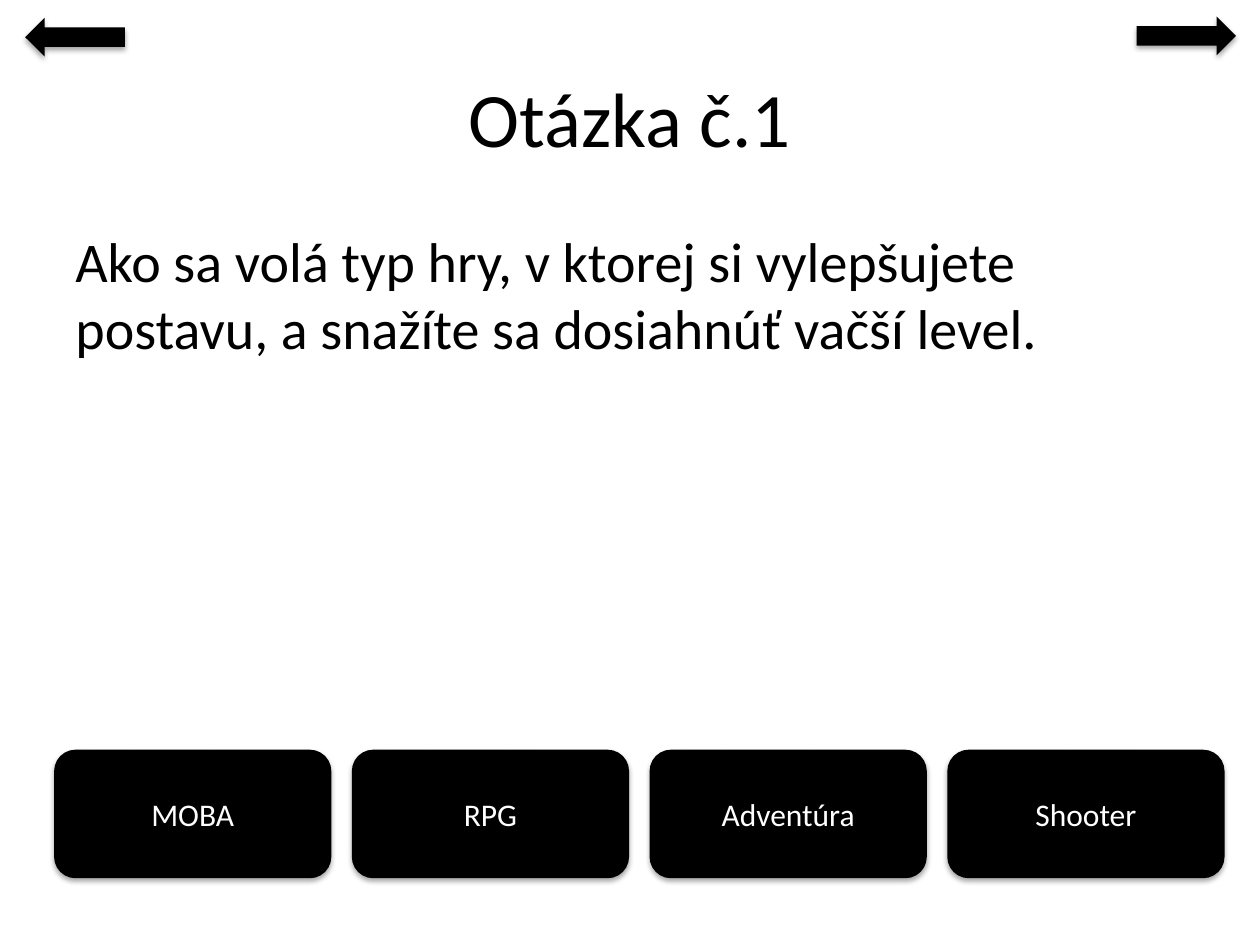
from dataclasses import dataclass

from lxml import etree
from pptx import Presentation
from pptx.dml.color import RGBColor
from pptx.enum.shapes import MSO_SHAPE
from pptx.enum.text import MSO_ANCHOR, PP_ALIGN
from pptx.oxml.ns import qn
from pptx.util import Inches, Pt

BLACK = RGBColor(0x00, 0x00, 0x00)
WHITE = RGBColor(0xFF, 0xFF, 0xFF)
FONT = "Calibri"
ARROW, BUTTON = MSO_SHAPE.RIGHT_ARROW, MSO_SHAPE.ROUNDED_RECTANGLE
CENTER, LEFT = PP_ALIGN.CENTER, PP_ALIGN.LEFT
MIDDLE, TOP = MSO_ANCHOR.MIDDLE, MSO_ANCHOR.TOP

SLIDE_W, SLIDE_H = 10, 7.5
MARGIN = 0.05 * SLIDE_W
CONTENT_W = SLIDE_W - 2 * MARGIN
ANSWERS_LEFT, ANSWERS_TOP = 0.43, 5.95
ANSWER_W, ANSWER_H, ANSWER_PITCH = 2.2, 1.02, 2.363
ARROW_W, ARROW_H = 0.79, 0.31


@dataclass(frozen=True)
class Box:
    left: float
    top: float
    width: float
    height: float

    def emu(self) -> tuple:
        return tuple(Inches(v) for v in (self.left, self.top, self.width, self.height))


@dataclass(frozen=True)
class NavArrow:
    left: float
    top: float
    rotation: float


ARROWS = (NavArrow(9.02, 0.13, 0), NavArrow(0.2, 0.14, 180))
ANSWERS = ("MOBA", "RPG", "Adventúra", "Shooter")


def write(sp, text: str, size: float, color: RGBColor, align, anchor) -> None:
    tf = sp.text_frame
    tf.word_wrap = True
    tf.vertical_anchor = anchor
    tf.text = text
    p = tf.paragraphs[0]
    p.alignment = align
    font = p.runs[0].font
    font.name, font.size = FONT, Pt(size)
    font.color.rgb = color


def add_shadow(sp) -> None:
    """Give the shape a soft shadow that falls straight down."""
    sp.shadow.inherit = False
    effects = sp._element.spPr.find(qn("a:effectLst"))
    shadow = etree.SubElement(
        effects, qn("a:outerShdw"), blurRad=str(Pt(3.1)), dist=str(Pt(1.8)),
        dir=str(90 * 60000), rotWithShape="0")
    color = etree.SubElement(shadow, qn("a:srgbClr"), val=str(BLACK))
    etree.SubElement(color, qn("a:alpha"), val="35000")


def add_black_shape(slide, kind, box: Box):
    sp = slide.shapes.add_shape(kind, *box.emu())
    sp.fill.solid()
    sp.fill.fore_color.rgb = BLACK
    sp.line.fill.background()
    add_shadow(sp)
    return sp


def main() -> None:
    prs = Presentation()
    prs.slide_width, prs.slide_height = Inches(SLIDE_W), Inches(SLIDE_H)
    slide = prs.slides.add_slide(prs.slide_layouts[5])

    title = slide.shapes.title
    title.left, title.top, title.width, title.height = Box(
        MARGIN, 0.04 * SLIDE_H, CONTENT_W, SLIDE_H / 6).emu()
    write(title, "Otázka č.1", 44, BLACK, CENTER, MIDDLE)

    question = slide.shapes.add_textbox(*Box(MARGIN, 1.75, CONTENT_W, 0.54 * SLIDE_H).emu())
    write(question, "Ako sa volá typ hry, v ktorej si vylepšujete postavu, "
          "a snažíte sa dosiahnúť vačší level.", 32, BLACK, LEFT, TOP)

    for arrow in ARROWS:
        sp = add_black_shape(slide, ARROW, Box(arrow.left, arrow.top, ARROW_W, ARROW_H))
        sp.rotation = arrow.rotation

    for col, answer in enumerate(ANSWERS):
        left = ANSWERS_LEFT + col * ANSWER_PITCH
        sp = add_black_shape(slide, BUTTON, Box(left, ANSWERS_TOP, ANSWER_W, ANSWER_H))
        write(sp, answer, 18, WHITE, CENTER, MIDDLE)

    prs.save("out.pptx")


if __name__ == "__main__":
    main()
